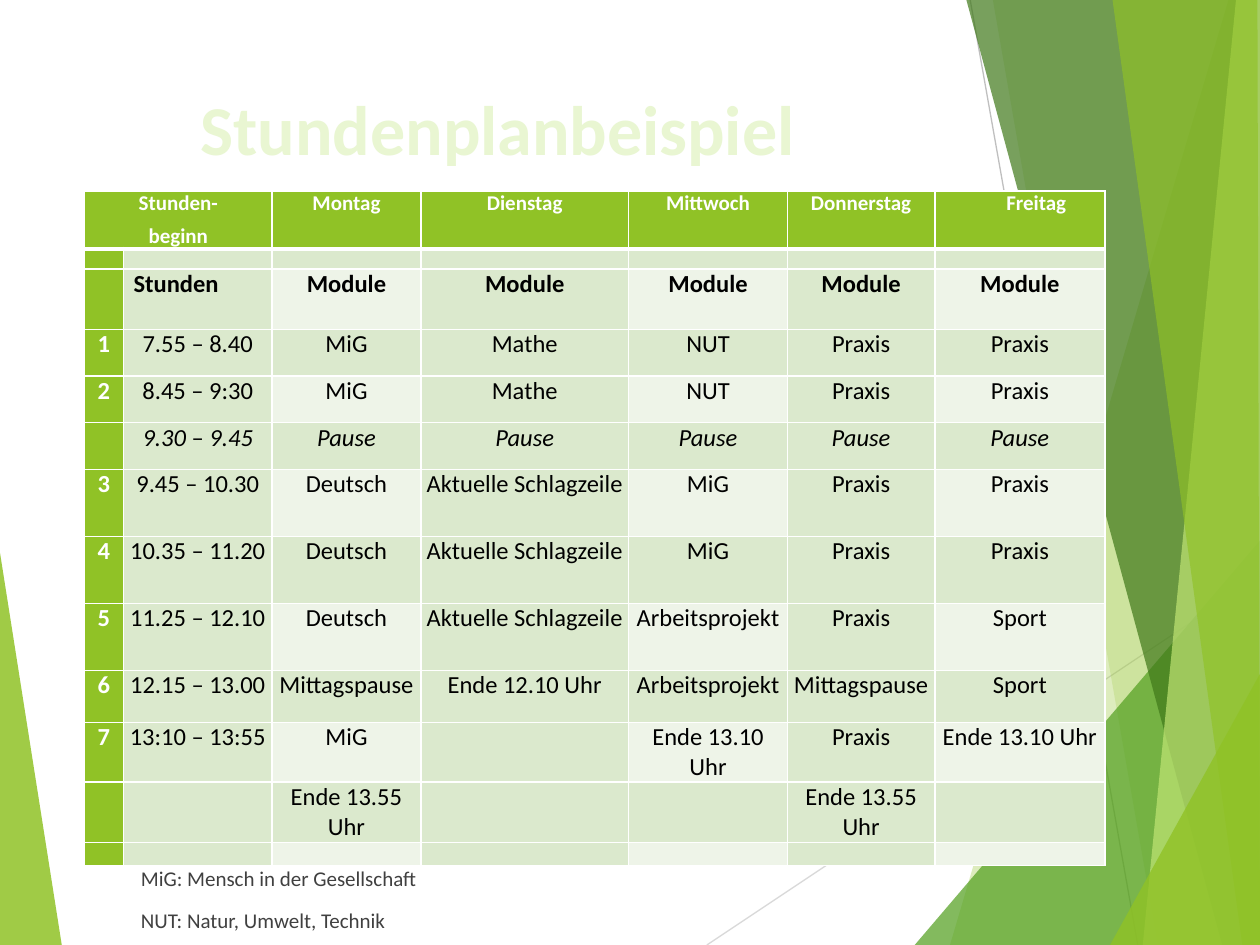
import dataclasses
import typing

import lxml.etree
import pptx
import pptx.dml.color
import pptx.enum.shapes
import pptx.enum.text
import pptx.oxml.ns
import pptx.util

RGB = pptx.dml.color.RGBColor
LIME = RGB(0x90, 0xC2, 0x26)
GREEN = RGB(0x54, 0xA0, 0x21)
FOREST = RGB(0x3F, 0x78, 0x19)
LIGHT = RGB(0xC0, 0xE4, 0x74)
MINT = RGB(0xDB, 0xE9, 0xCD)
PALE = RGB(0xEE, 0xF4, 0xE8)
CREAM = RGB(0xE9, 0xF6, 0xD2)
SILVER = RGB(0xD9, 0xD9, 0xD9)
GRAY = RGB(0xBF, 0xBF, 0xBF)
DARK = RGB(0x40, 0x40, 0x40)
WHITE = RGB(0xFF, 0xFF, 0xFF)
BLACK = RGB(0, 0, 0)

WIDTH, HEIGHT = pptx.util.Inches(10), pptx.util.Inches(7.5)
FACE = "Calibri"
CENTER = pptx.enum.text.PP_ALIGN.CENTER
LEFT = pptx.enum.text.PP_ALIGN.LEFT
Point = tuple[float, float]


@dataclasses.dataclass
class Facet:
    """A translucent polygon; points and opacity are in percent."""
    color: RGB
    alpha: int
    points: list[Point]


@dataclasses.dataclass
class Ray:
    color: RGB
    start: Point
    end: Point


@dataclasses.dataclass
class Row:
    """A table row; height is in percent of the slide's height."""
    height: float
    texts: tuple[str, ...] = ("",) * 7
    bold: bool = False
    italic: bool = False


EDGE = Facet(LIME, 85, [(0, 58.5), (4.9, 100), (0, 100)])
RAYS = [Ray(SILVER, (56.1, 100), (100, 61)), Ray(GRAY, (77, 0), (90.3, 100))]
FACETS = [
    Facet(LIME, 30, [(97.5, 0), (75.4, 100), (100, 100), (100, 0)]),
    Facet(LIME, 20, [(78.8, 0), (91.9, 100), (100, 100), (100, 0)]),
    Facet(GREEN, 72, [(72.6, 100), (100, 57.2), (100, 100)]),
    Facet(FOREST, 70, [(76.7, 0), (97, 100), (100, 100), (100, 0)]),
    Facet(LIGHT, 70, [(98.1, 0), (90.7, 100), (100, 100), (100, 0)]),
    Facet(LIME, 65, [(88.3, 0), (98.6, 100), (100, 100), (99.8, 0)]),
    Facet(LIME, 80, [(88.1, 100), (100, 71.3), (100, 100)]),
]

COLUMNS = [3.1, 11.8, 11.8, 16.5, 12.6, 11.7, 13.5]
NEWS, WORK = "Aktuelle Schlagzeile", "Arbeitsprojekt"
ROWS = [
    Row(6.15, ("Stunden-\nbeginn", "", "Montag", "Dienstag", "Mittwoch",
               "Donnerstag", "Freitag"), bold=True),
    Row(2.1),
    Row(6.4, ("", "Stunden") + ("Module",) * 5, bold=True),
    Row(4.95, ("1", "7.55 – 8.40", "MiG", "Mathe", "NUT", "Praxis", "Praxis")),
    Row(4.95, ("2", "8.45 – 9:30", "MiG", "Mathe", "NUT", "Praxis", "Praxis")),
    Row(4.95, ("", "9.30 – 9.45") + ("Pause",) * 5, italic=True),
    Row(7.1, ("3", "9.45 – 10.30", "Deutsch", NEWS, "MiG", "Praxis", "Praxis")),
    Row(7.1, ("4", "10.35 – 11.20", "Deutsch", NEWS, "MiG", "Praxis", "Praxis")),
    Row(7.1, ("5", "11.25 – 12.10", "Deutsch", NEWS, WORK, "Praxis", "Sport")),
    Row(5.5, ("6", "12.15 – 13.00", "Mittagspause", "Ende 12.10 Uhr", WORK,
              "Mittagspause", "Sport")),
    Row(6.3, ("7", "13:10 – 13:55", "MiG", "", "Ende 13.10 Uhr", "Praxis",
              "Ende 13.10 Uhr")),
    Row(6.4, ("", "", "Ende 13.55 Uhr", "", "", "Ende 13.55 Uhr", "")),
    Row(2.4),
]
INSETS = {(0, 6): 0.3, (2, 1): 0.08}


def across(share: float) -> int:
    return round(WIDTH * share / 100)


def down(share: float) -> int:
    return round(HEIGHT * share / 100)


def place(point: Point) -> tuple[int, int]:
    return across(point[0]), down(point[1])


def add_node(parent: typing.Any, tag: str, **attrs: str) -> typing.Any:
    return lxml.etree.SubElement(parent, pptx.oxml.ns.qn(tag), attrs)


def set_font(font: typing.Any, size: float, color: RGB, bold: bool = False) -> None:
    font.name, font.size, font.bold = FACE, pptx.util.Pt(size), bold
    font.color.rgb = color


def draw_facet(shapes: typing.Any, facet: Facet) -> None:
    first, *rest = [place(point) for point in facet.points]
    outline = shapes.build_freeform(*first)
    outline.add_line_segments(rest, close=True)
    shape = outline.convert_to_shape()
    shape.shadow.inherit = False
    shape.fill.solid()
    shape.fill.fore_color.rgb = facet.color
    shape.line.fill.background()
    color = shape.element.spPr.find(".//" + pptx.oxml.ns.qn("a:srgbClr"))
    add_node(color, "a:alpha", val=str(facet.alpha * 1000))


def draw_ray(shapes: typing.Any, ray: Ray) -> None:
    line = shapes.add_connector(pptx.enum.shapes.MSO_CONNECTOR.STRAIGHT,
                                *place(ray.start), *place(ray.end))
    line.line.color.rgb = ray.color
    line.line.width = pptx.util.Pt(0.75)
    add_node(line.element.spPr, "a:effectLst")


def draw_text(shapes: typing.Any, start: Point, size: Point, lines: list[str],
              style: tuple, align: typing.Any, gap: float, inset: Point) -> None:
    frame = shapes.add_textbox(*place(start), *place(size)).text_frame
    frame.word_wrap = True
    frame.margin_left = frame.margin_right = pptx.util.Inches(inset[0])
    frame.margin_top = frame.margin_bottom = pptx.util.Inches(inset[1])
    frame.text = "\n".join(lines)
    for para in frame.paragraphs:
        para.alignment = align
        para.space_before = pptx.util.Pt(gap)
        set_font(para.font, *style)


def set_border(cell: typing.Any, top: float, bottom: float) -> None:
    """Put white lines around a cell, ahead of its fill as the schema asks."""
    props = cell._tc.get_or_add_tcPr()
    sides = {"L": 1, "R": 1, "T": top, "B": bottom}
    for spot, (side, width) in enumerate(sides.items()):
        line = add_node(props, "a:ln" + side, w=str(pptx.util.Pt(width)))
        add_node(add_node(line, "a:solidFill"), "a:srgbClr", val=str(WHITE))
        props.insert(spot, line)


def fill_cell(cell: typing.Any, row: Row, down_at: int, over_at: int) -> None:
    head, side = down_at == 0, over_at == 0
    cell.margin_left = pptx.util.Inches(INSETS.get((down_at, over_at), 0.04))
    cell.margin_right = pptx.util.Inches(0.04)
    cell.margin_top = cell.margin_bottom = 0
    cell.fill.solid()
    band = PALE if down_at % 2 == 0 and over_at % 2 == 0 else MINT
    cell.fill.fore_color.rgb = LIME if head or side else band
    set_border(cell, 3 if down_at == 1 else 1, 3 if head else 1)

    frame = cell.text_frame
    for spot, text in enumerate(row.texts[over_at].split("\n")):
        para = frame.add_paragraph() if spot else frame.paragraphs[0]
        para.alignment = LEFT if (down_at, over_at) == (2, 1) else CENTER
        para.space_before = pptx.util.Pt(4 if text else 0)
        if not text:
            add_node(para._p, "a:endParaRPr", sz="800")
            continue
        for part in filter(None, text.partition("– ") if row.italic else [text]):
            run = para.add_run()
            run.text = part
            set_font(run.font, 12 if head else 14,
                     WHITE if head or side else BLACK, row.bold or side)
            run.font.italic = row.italic and part != "– "


def draw_table(shapes: typing.Any) -> None:
    size = sum(COLUMNS), sum(row.height for row in ROWS)
    table = shapes.add_table(len(ROWS), len(COLUMNS), *place((6.7, 20.2)),
                             *place(size)).table
    table.first_row = table.horz_banding = False
    for column, share in zip(table.columns, COLUMNS):
        column.width = across(share)
    for down_at, row in enumerate(ROWS):
        table.rows[down_at].height = down(row.height)
        for over_at in range(len(COLUMNS)):
            fill_cell(table.cell(down_at, over_at), row, down_at, over_at)
    table.cell(0, 0).merge(table.cell(0, 1))


def main() -> None:
    deck = pptx.Presentation()
    deck.slide_width, deck.slide_height = WIDTH, HEIGHT
    shapes = deck.slides.add_slide(deck.slide_layouts[6]).shapes
    draw_facet(shapes, EDGE)
    for ray in RAYS:
        draw_ray(shapes, ray)
    for facet in FACETS:
        draw_facet(shapes, facet)
    draw_text(shapes, (6.7, 9), (65.6, 9.1), ["Stundenplanbeispiel"],
              (40, CREAM, True), CENTER, 0, (0, 0))
    draw_table(shapes)
    draw_text(shapes, (10.2, 90.9), (37, 6.8),
              ["MiG: Mensch in der Gesellschaft", "NUT: Natur, Umwelt, Technik"],
              (12, DARK), LEFT, 10, (0.1, 0.05))
    deck.save("out.pptx")


if __name__ == "__main__":
    main()
